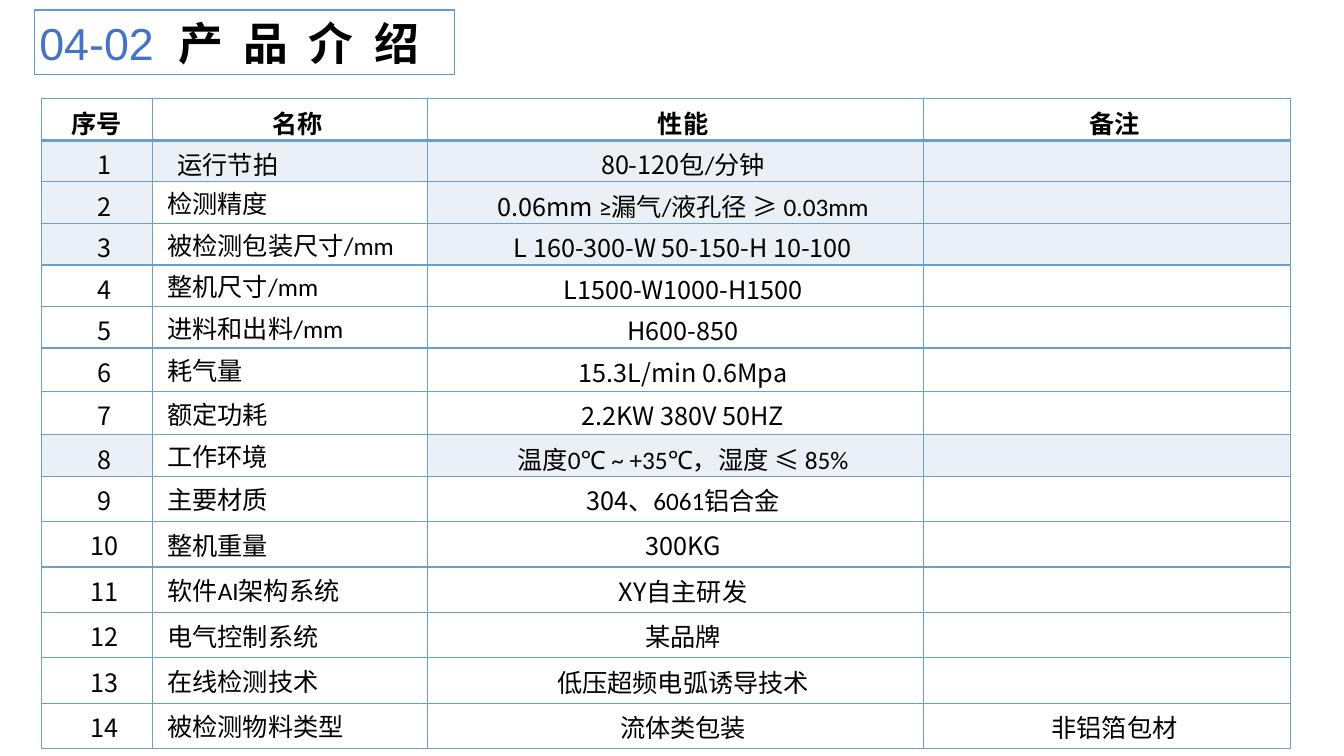
from dataclasses import dataclass

from lxml.etree import SubElement
from pptx import Presentation
from pptx.dml.color import RGBColor
from pptx.enum.shapes import MSO_SHAPE
from pptx.enum.text import MSO_ANCHOR, PP_ALIGN
from pptx.oxml.ns import qn
from pptx.util import Inches, Pt


@dataclass(frozen=True)
class Theme:
    """Colours, fonts and type sizes of the slide."""

    white: RGBColor = RGBColor.from_string("FFFFFF")
    ink: RGBColor = RGBColor.from_string("000000")
    number: RGBColor = RGBColor.from_string("4472C4")
    frame: RGBColor = RGBColor.from_string("5B9BD5")
    shade: RGBColor = RGBColor.from_string("EBF0F6")
    grid: str = "6B9FCB"
    number_font: str = "Arial"
    word_font: str = "Calibri"
    value_font: str = "Noto Sans CJK SC"
    title_size: int = 32
    table_size: int = 18


THEME = Theme()
HEADINGS = ("序号", "名称", "性能", "备注")
COLUMN_WIDTHS = (1.1, 2.73, 4.92, 3.64)
ROW_HEIGHTS = (0.4,) * 6 + (0.43,) * 2 + (0.4,) + (0.45,) * 6
SHADED_ROWS = (1, 2, 3, 8)
FIRST_LINE_INDENT = Inches(0.15)

PRODUCT_ROWS = (
    ("运行节拍", "80-120", "包/分钟", ""),
    ("检测精度", "0.06mm ", "≥漏气/液孔径 ≥ 0.03mm", ""),
    ("被检测包装尺寸/mm", "L 160-300-W 50-150-H 10-100", "", ""),
    ("整机尺寸/mm", "L1500-W1000-H1500", "", ""),
    ("进料和出料/mm", "H600-850", "", ""),
    ("耗气量", "15.3L/min 0.6Mpa", "", ""),
    ("额定功耗", "2.2KW 380V 50HZ", "", ""),
    ("工作环境", "", "温度0℃ ~ +35℃，湿度 ≤ 85%", ""),
    ("主要材质", "304", "、6061铝合金", ""),
    ("整机重量", "300KG", "", ""),
    ("软件AI架构系统", "XY", "自主研发", ""),
    ("电气控制系统", "", "某品牌", ""),
    ("在线检测技术", "", "低压超频电弧诱导技术", ""),
    ("被检测物料类型", "", "流体类包装", "非铝箔包材"),
)


def add_panel(slide, box, line_color):
    """Add a white rectangle with a thin outline."""
    panel = slide.shapes.add_shape(MSO_SHAPE.RECTANGLE, *map(Inches, box))
    panel.shadow.inherit = False
    panel.fill.solid()
    panel.fill.fore_color.rgb = THEME.white
    panel.line.color.rgb = line_color
    panel.line.width = Pt(1)
    return panel


def add_title(slide, box):
    """Add the framed section number and title."""
    frame = add_panel(slide, box, THEME.frame).text_frame
    frame.word_wrap = False
    frame.vertical_anchor = MSO_ANCHOR.MIDDLE
    frame.margin_left = frame.margin_right = Inches(0.05)
    frame.margin_top = frame.margin_bottom = Inches(0.05)
    para = frame.paragraphs[0]
    para.alignment = PP_ALIGN.LEFT
    para.font.size = Pt(THEME.title_size)
    for text, font, color, bold, spacing in (
        ("04-02", THEME.number_font, THEME.number, False, 0),
        (" ", THEME.number_font, THEME.number, False, 890),
        ("产 品 介 绍", THEME.value_font, THEME.ink, True, 360),
    ):
        span = para.add_run()
        span.text = text
        span.font.name = font
        span.font.color.rgb = color
        span.font.bold = bold
        span._r.get_or_add_rPr().set("spc", str(spacing))


def draw_borders(cell, top, bottom):
    """Outline a cell, with the top and bottom widths in points."""
    properties = cell._tc.get_or_add_tcPr()
    for tag, width in (("a:lnL", 1), ("a:lnR", 1), ("a:lnT", top), ("a:lnB", bottom)):
        line = SubElement(properties, qn(tag), w=str(Pt(width)))
        fill = SubElement(line, qn("a:solidFill"))
        SubElement(fill, qn("a:srgbClr"), val=THEME.grid)


def write_cell(cell, spans, alignment=PP_ALIGN.CENTER, bold=False, indent=FIRST_LINE_INDENT):
    """Write pairs of text and font into a cell."""
    cell.margin_bottom = 0
    para = cell.text_frame.paragraphs[0]
    para.alignment = alignment
    para.font.size = Pt(THEME.table_size)
    para.font.color.rgb = THEME.ink
    para.font.bold = bold
    para._p.get_or_add_pPr().set("indent", str(indent))
    for text, font in spans:
        if text:
            span = para.add_run()
            span.text = text
            span.font.name = font


def write_product(cells, number, product):
    """Write one product row into its four cells."""
    name, measured, worded, remark = product
    number_cell, name_cell, value_cell, remark_cell = cells
    write_cell(number_cell, [(str(number), THEME.value_font)])
    write_cell(name_cell, [(name, THEME.word_font)],
               PP_ALIGN.JUSTIFY if number == 1 else PP_ALIGN.LEFT)
    write_cell(value_cell, [(measured, THEME.value_font), (worded, THEME.word_font)])
    write_cell(remark_cell, [(remark, THEME.word_font)])
    if number > 1:
        name_cell.vertical_anchor = MSO_ANCHOR.MIDDLE
        name_cell.margin_left = name_cell.margin_right = name_cell.margin_top = 0


def add_product_table(slide, box):
    """Add the table of product properties."""
    table = slide.shapes.add_table(
        len(ROW_HEIGHTS), len(COLUMN_WIDTHS), *map(Inches, box)).table
    table.first_row = table.horz_banding = False
    for column, width in zip(table.columns, COLUMN_WIDTHS):
        column.width = Inches(width)
    for row, height in zip(table.rows, ROW_HEIGHTS):
        row.height = Inches(height)

    for position, (cell, heading) in enumerate(zip(table.rows[0].cells, HEADINGS)):
        write_cell(cell, [(heading, THEME.word_font)], bold=True,
                   indent=FIRST_LINE_INDENT if position else 0)
    for number, product in enumerate(PRODUCT_ROWS, start=1):
        write_product(table.rows[number].cells, number, product)

    for index, row in enumerate(table.rows):
        for position, cell in enumerate(row.cells):
            draw_borders(cell, 2.25 if index == 1 else 1, 2.25 if index == 0 else 1)
            if index in SHADED_ROWS and (position != 1 or index == 1):
                cell.fill.solid()
                cell.fill.fore_color.rgb = THEME.shade
            else:
                cell.fill.background()


def main():
    """Build the product slide and save the deck."""
    deck = Presentation()
    deck.slide_width, deck.slide_height = Inches(13.33), Inches(7.5)
    page = deck.slides.add_slide(deck.slide_layouts[6])
    add_panel(page, (0, 0, 13.33, 7.5), THEME.white)
    add_title(page, (0.34, 0.1, 4.17, 0.64))
    add_product_table(page, (0.41, 0.98, sum(COLUMN_WIDTHS), sum(ROW_HEIGHTS)))
    deck.save("out.pptx")


if __name__ == "__main__":
    main()
